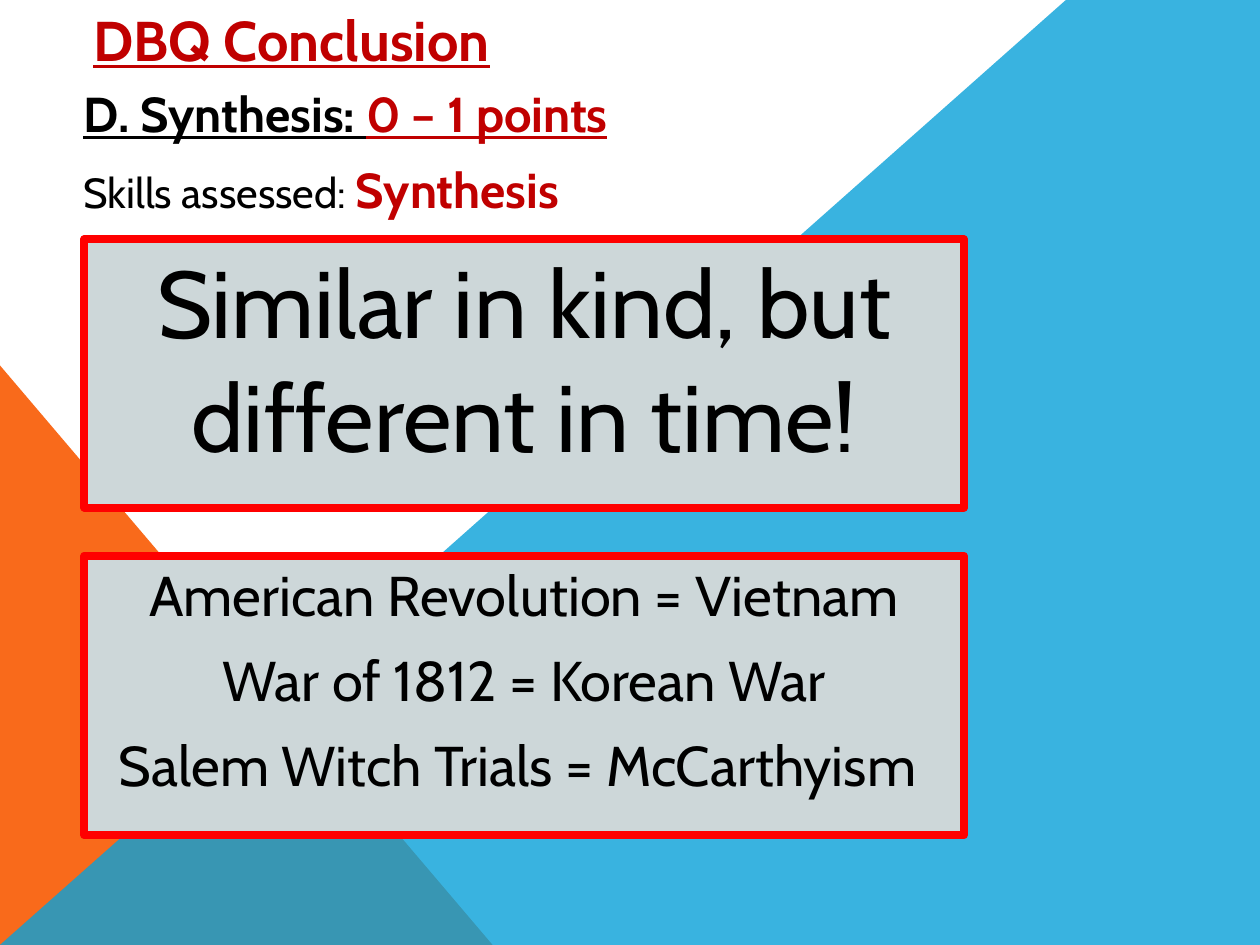
from dataclasses import dataclass

from lxml import etree
from pptx import Presentation
from pptx.dml.color import RGBColor
from pptx.enum.shapes import MSO_SHAPE
from pptx.enum.text import MSO_ANCHOR, MSO_AUTO_SIZE, PP_ALIGN
from pptx.oxml.ns import qn
from pptx.util import Inches, Pt

RECTANGLE, RIGHT_TRIANGLE = MSO_SHAPE.RECTANGLE, MSO_SHAPE.RIGHT_TRIANGLE
LEFT, CENTER = PP_ALIGN.LEFT, PP_ALIGN.CENTER
TOP, NO_AUTOFIT = MSO_ANCHOR.TOP, MSO_AUTO_SIZE.NONE
WIDTH, HEIGHT = Inches(10), Inches(7.5)


@dataclass(frozen=True)
class Theme:
    font: str = "Cabin"
    black: str = "000000"
    accent: str = "C00000"
    orange: str = "F96A1B"
    blue: str = "08A1D9"
    panel: str = "CDD7D9"
    border: str = "FF0000"
    border_width: float = 4.5
    paragraph_gap: int = 10
    huge: int = 54
    large: int = 32
    medium: int = 28
    small: int = 24


THEME = Theme()


@dataclass(frozen=True)
class Area:
    """A rectangle in percent of the slide's width and height."""
    left: float
    top: float
    width: float
    height: float

    def lengths(self) -> tuple[int, ...]:
        return (int(WIDTH * self.left / 100), int(HEIGHT * self.top / 100),
                int(WIDTH * self.width / 100), int(HEIGHT * self.height / 100))


@dataclass(frozen=True)
class Span:
    text: str
    size: int
    color: str = THEME.black
    bold: bool = False
    underline: bool = False


@dataclass(frozen=True)
class Panel:
    area: Area
    size: int
    lines: tuple[str, ...]


TITLE_AREA = Area(6.7, 0, 75, 6.4)
BODY_AREA = Area(5.9, 8.27, 75, 11.73)
TITLE = [[Span("DBQ Conclusion", THEME.large, THEME.accent, True, True)]]
BODY = [
    [Span("D. Synthesis: ", THEME.medium, THEME.black, True, True),
     Span("0 – 1 points", THEME.medium, THEME.accent, True, True)],
    [Span("Skills assessed: ", THEME.small),
     Span("Synthesis", THEME.medium, THEME.accent, True)],
]
PANELS = [
    Panel(Area(6.7, 25.33, 69.8, 28.4), THEME.huge,
          ("Similar in kind, but different in time!",)),
    Panel(Area(6.7, 58.8, 69.8, 29.6), THEME.large,
          ("American Revolution = Vietnam", "War of 1812 = Korean War",
           "Salem Witch Trials = McCarthyism ")),
]


def paint(shape, color: str) -> None:
    shape.shadow.inherit = False
    shape.fill.solid()
    shape.fill.fore_color.rgb = RGBColor.from_string(color)
    shape.line.fill.background()


def draw_backdrop(page) -> None:
    """Place the orange and blue wedges behind the placeholders."""
    triangle = page.shapes.add_shape(
        RIGHT_TRIANGLE, *Area(0, 38.67, 39.1, 61.33).lengths())
    paint(triangle, THEME.orange)

    outline = page.shapes.build_freeform(0, HEIGHT)
    outline.add_line_segments(
        [(int(WIDTH * 0.846), 0), (WIDTH, 0), (WIDTH, HEIGHT)], close=True)
    wedge = outline.convert_to_shape()
    paint(wedge, THEME.blue)
    color = wedge._element.spPr.find(qn("a:solidFill"))[0]
    etree.SubElement(color, qn("a:alpha"), val="80000")

    tree = triangle._element.getparent()
    for position, shape in enumerate((triangle, wedge), start=2):
        tree.insert(position, shape._element)


def write(shape, paragraphs: list[list[Span]], alignment: PP_ALIGN) -> None:
    frame = shape.text_frame
    frame.word_wrap = True
    frame.auto_size = NO_AUTOFIT
    frame.vertical_anchor = TOP
    frame.margin_left = frame.margin_right = Inches(0.07)
    frame.margin_top = frame.margin_bottom = Inches(0.04)
    for index, spans in enumerate(paragraphs):
        para = frame.add_paragraph() if index else frame.paragraphs[0]
        para.alignment = alignment
        para.space_before = Pt(THEME.paragraph_gap)
        for span in spans:
            run = para.add_run()
            run.text = span.text
            font = run.font
            font.name, font.size = THEME.font, Pt(span.size)
            font.bold, font.underline = span.bold, span.underline
            font.color.rgb = RGBColor.from_string(span.color)


def fill_placeholder(holder, area: Area, paragraphs: list[list[Span]]) -> None:
    holder.left, holder.top, holder.width, holder.height = area.lengths()
    write(holder, paragraphs, LEFT)
    for para in holder.text_frame.paragraphs:
        properties = para._p.get_or_add_pPr()
        properties.set("marL", "0")
        properties.set("indent", "0")
        etree.SubElement(properties, qn("a:buNone"))


def draw_panel(page, panel: Panel) -> None:
    box = page.shapes.add_shape(RECTANGLE, *panel.area.lengths())
    paint(box, THEME.panel)
    box.line.color.rgb = RGBColor.from_string(THEME.border)
    box.line.width = Pt(THEME.border_width)
    write(box, [[Span(line, panel.size)] for line in panel.lines], CENTER)


def main() -> None:
    deck = Presentation()
    deck.slide_width, deck.slide_height = WIDTH, HEIGHT
    page = deck.slides.add_slide(deck.slide_layouts[1])
    draw_backdrop(page)
    fill_placeholder(page.shapes.title, TITLE_AREA, TITLE)
    fill_placeholder(page.placeholders[1], BODY_AREA, BODY)
    for panel in PANELS:
        draw_panel(page, panel)
    deck.save("out.pptx")


if __name__ == "__main__":
    main()
